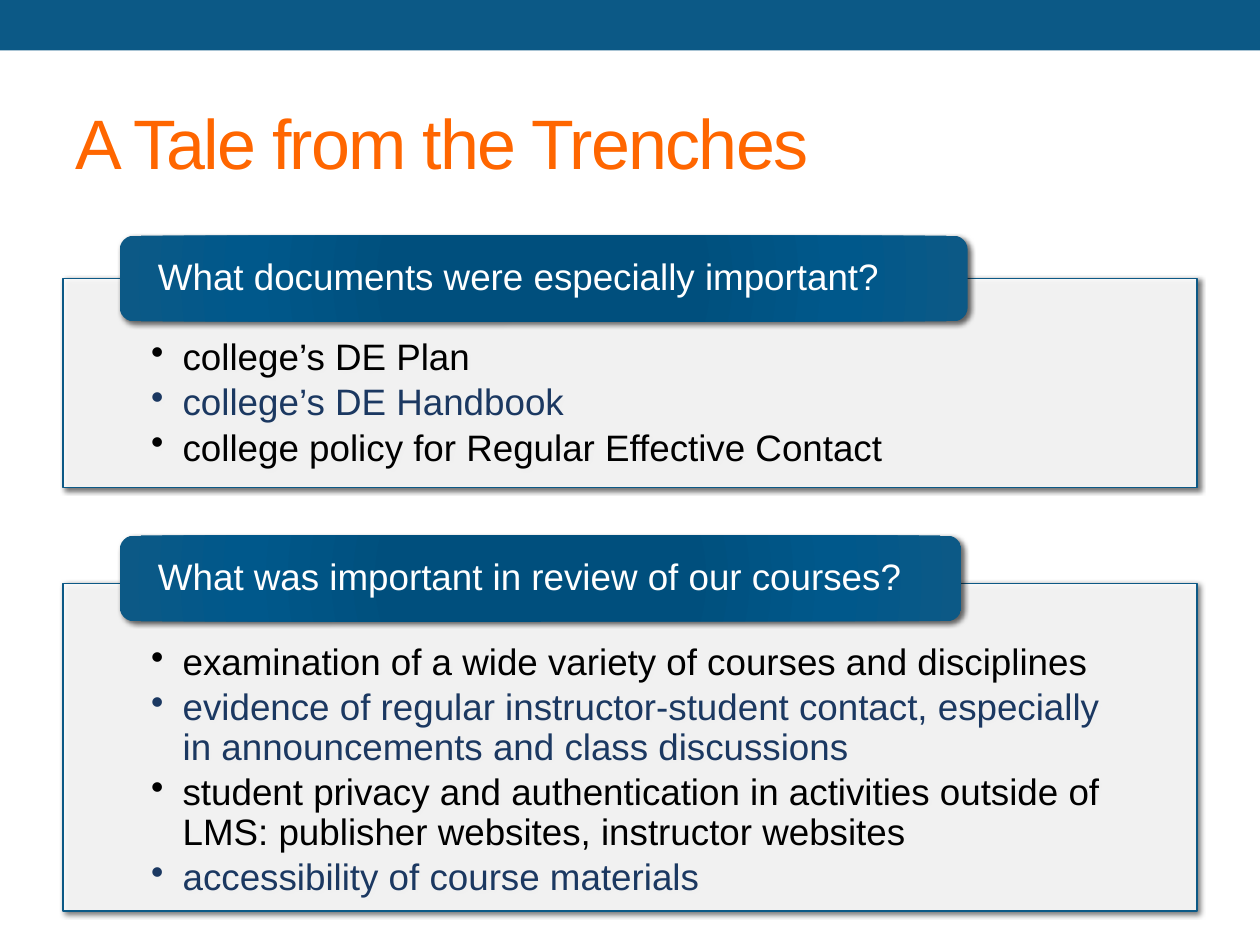
import pptx
import pptx.dml.color
import pptx.enum.shapes
import pptx.enum.text
import pptx.oxml
import pptx.oxml.ns
import pptx.util

Pt = pptx.util.Pt
SHAPES = pptx.enum.shapes.MSO_SHAPE
ANCHOR = pptx.enum.text.MSO_ANCHOR
LEFT = pptx.enum.text.PP_ALIGN.LEFT
NAMESPACE = pptx.oxml.ns.nsdecls("a")

COLORS = {
    "blue": "0C5986",
    "deep_blue": "004F7D",
    "mid_blue": "00588B",
    "orange": "FF6600",
    "navy": "1B3861",
    "black": "000000",
    "white": "FFFFFF",
}
HEADING_STOPS = [(0, "deep_blue"), (34, "deep_blue"), (70, "mid_blue"), (100, "blue")]
SECTIONS = [
    {
        "heading": "What documents were especially important?",
        "heading_top": 134.64,
        "heading_width": 484.6,
        "panel_top": 159.1,
        "panel_height": 119.5,
        "points": [
            "college’s DE Plan",
            "college’s DE Handbook",
            "college policy for Regular Effective Contact",
        ],
    },
    {
        "heading": "What was important in review of our courses?",
        "heading_top": 306,
        "heading_width": 481,
        "panel_top": 333.4,
        "panel_height": 187.2,
        "points": [
            "examination of a wide variety of courses and disciplines",
            "evidence of regular instructor-student contact, especially in announcements and class discussions",
            "student privacy and authentication in activities outside of LMS: publisher websites, instructor websites",
            "accessibility of course materials",
        ],
    },
]


def rgb(name):
    """Return the named colour as an RGBColor."""
    return pptx.dml.color.RGBColor.from_string(COLORS[name])


def set_font(paragraph, size, color):
    """Set the font of a whole paragraph."""
    paragraph.font.name = "Arial"
    paragraph.font.size = Pt(size)
    paragraph.font.color.rgb = rgb(color)


def set_frame(frame, anchor, left, top, right, bottom):
    """Set wrapping, anchor and margins of a text frame."""
    frame.word_wrap = True
    frame.vertical_anchor = anchor
    frame.margin_left, frame.margin_top = Pt(left), Pt(top)
    frame.margin_right, frame.margin_bottom = Pt(right), Pt(bottom)


def add_box(slide, preset, left, top, width, height):
    """Add a preset shape without line or shadow."""
    box = slide.shapes.add_shape(preset, Pt(left), Pt(top), Pt(width), Pt(height))
    box.shadow.inherit = False
    box.line.fill.background()
    return box


def fill_solid(box, color):
    """Fill a shape with one colour."""
    box.fill.solid()
    box.fill.fore_color.rgb = rgb(color)


def add_shadow(box):
    """Give a shape a soft shadow to the lower right."""
    effects = box._element.spPr.find(pptx.oxml.ns.qn("a:effectLst"))
    effects.append(pptx.oxml.parse_xml(
        f'<a:outerShdw {NAMESPACE} blurRad="{Pt(3)}" dist="{Pt(2)}" dir="2700000" rotWithShape="0">'
        f'<a:srgbClr val="{COLORS["black"]}"><a:alpha val="60000"/></a:srgbClr></a:outerShdw>'))


def add_bullet(paragraph):
    """Give a paragraph a hanging round bullet."""
    properties = paragraph._p.get_or_add_pPr()
    properties.set("marL", str(Pt(18)))
    properties.set("indent", str(-Pt(18)))
    properties.append(pptx.oxml.parse_xml(f'<a:buChar {NAMESPACE} char="•"/>'))


def add_title(slide, text):
    """Place and format the title."""
    title = slide.shapes.title
    title.left, title.top, title.width, title.height = Pt(36), Pt(41.8), Pt(648), Pt(77.8)
    title.text_frame.text = text
    title.text_frame.vertical_anchor = ANCHOR.MIDDLE
    paragraph = title.text_frame.paragraphs[0]
    paragraph.alignment = LEFT
    set_font(paragraph, 40, "orange")
    paragraph.runs[0]._r.get_or_add_rPr().set("spc", "-100")


def add_panel(slide, top, height, points):
    """Add a translucent panel with bullets in alternating colours."""
    panel = add_box(slide, SHAPES.RECTANGLE, 36, top, 648, height)
    fill_solid(panel, "white")
    fill_color = panel._element.spPr.find(".//" + pptx.oxml.ns.qn("a:srgbClr"))
    fill_color.append(pptx.oxml.parse_xml(f'<a:alpha {NAMESPACE} val="90000"/>'))
    panel.line.color.rgb = rgb("blue")
    panel.line.width = Pt(0.75)
    add_shadow(panel)
    frame = panel.text_frame
    set_frame(frame, ANCHOR.TOP, 50.4, 34.6, 50.4, 11.5)
    for index, point in enumerate(points):
        paragraph = frame.add_paragraph() if index else frame.paragraphs[0]
        paragraph.text = point
        paragraph.level = 1
        paragraph.alignment = LEFT
        paragraph.line_spacing = 0.9
        paragraph.space_after = Pt(3.15)
        add_bullet(paragraph)
        set_font(paragraph, 21, "navy" if index % 2 else "black")


def add_heading(slide, top, width, text):
    """Add a rounded heading with a radial gradient."""
    heading = add_box(slide, SHAPES.ROUNDED_RECTANGLE, 68.4, top, width, 49)
    stops = "".join(
        f'<a:gs pos="{position * 1000}"><a:srgbClr val="{COLORS[color]}"/></a:gs>'
        for position, color in HEADING_STOPS)
    heading._element.spPr.find(pptx.oxml.ns.qn("a:prstGeom")).addnext(pptx.oxml.parse_xml(
        f'<a:gradFill {NAMESPACE} rotWithShape="1"><a:gsLst>{stops}</a:gsLst><a:path path="circle">'
        '<a:fillToRect l="100000" t="100000" r="100000" b="100000"/></a:path></a:gradFill>'))
    add_shadow(heading)
    set_frame(heading.text_frame, ANCHOR.MIDDLE, 19.5, 0, 19.5, 0)
    paragraph = heading.text_frame.paragraphs[0]
    paragraph.text = text
    paragraph.alignment = LEFT
    paragraph.line_spacing = 0.9
    set_font(paragraph, 21, "white")


def main():
    """Build and save the slide."""
    presentation = pptx.Presentation()
    presentation.slide_width, presentation.slide_height = Pt(720), Pt(540)
    slide = presentation.slides.add_slide(presentation.slide_layouts[5])
    top_band = add_box(slide, SHAPES.RECTANGLE, 0, 0, 720, 28.8)
    fill_solid(top_band, "blue")
    add_title(slide, "A Tale from the Trenches")
    for section in SECTIONS:
        add_panel(slide, section["panel_top"], section["panel_height"], section["points"])
        add_heading(slide, section["heading_top"], section["heading_width"], section["heading"])
    presentation.save("out.pptx")


if __name__ == "__main__":
    main()
